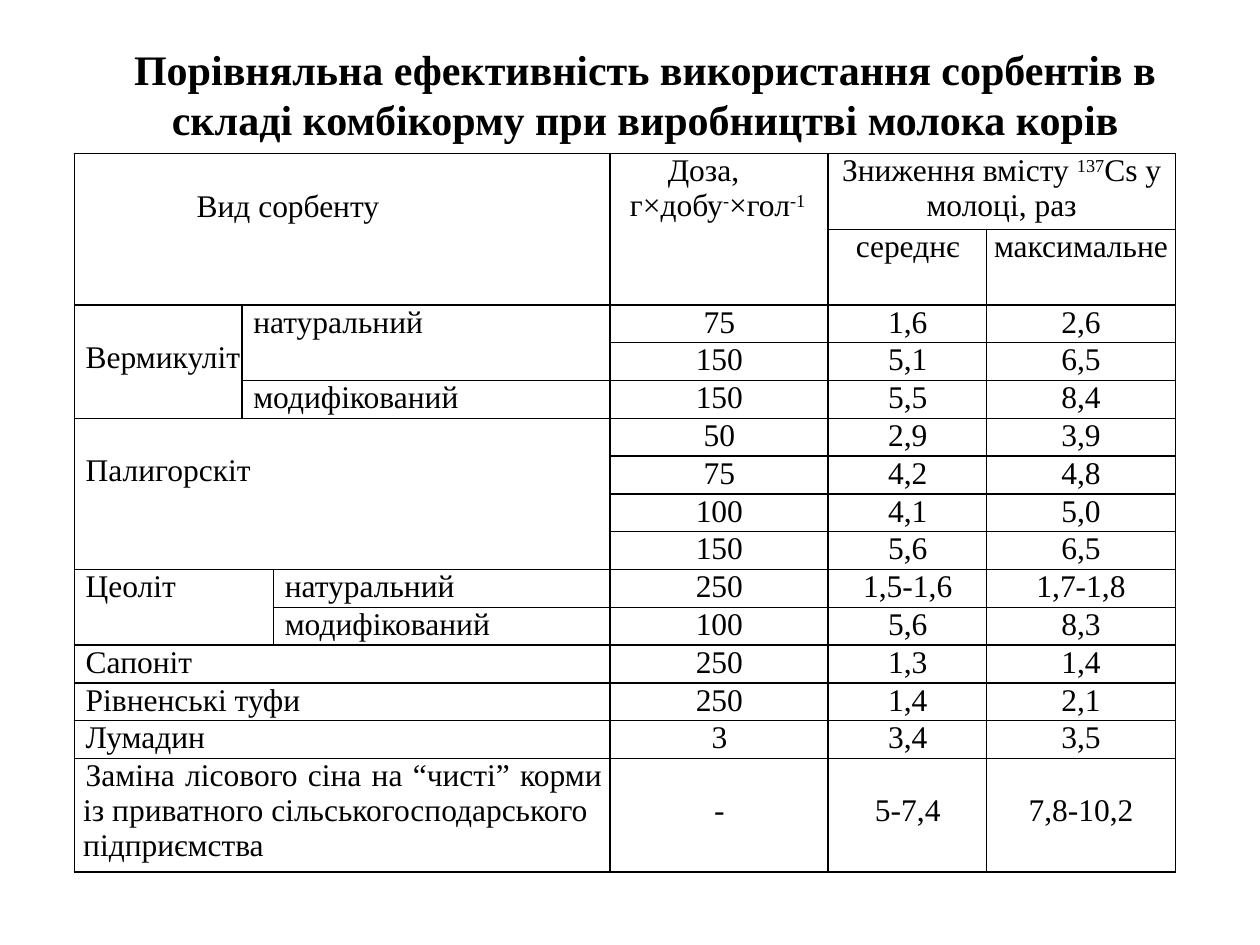
"""Build a slide with a table that compares sorbents in cow feed."""
from pptx import Presentation
from pptx.dml.color import RGBColor
from pptx.enum.text import MSO_ANCHOR, PP_ALIGN
from pptx.oxml import parse_xml
from pptx.oxml.ns import nsdecls
from pptx.util import Inches, Pt

BLACK = RGBColor(0, 0, 0)
WHITE = RGBColor(255, 255, 255)
FACE = "Times New Roman"
LEFT, MID, JUST = PP_ALIGN.LEFT, PP_ALIGN.CENTER, PP_ALIGN.JUSTIFY

TITLE = ("Порівняльна ефективність використання сорбентів в "
         "складі комбікорму при виробництві молока корів")
COLS = [1.33, 0.25, 2.67, 1.73, 1.26, 1.5]
ROWS = [0.6, 0.6] + [0.3] * 12 + [0.9]
LINE = 0.28

# row, column, rows, columns, text, align, margin, indent, top
HEADS = [
    (0, 0, 2, 3, "Вид сорбенту", LEFT, 0.97, 0, LINE),
    (0, 3, 2, 1, "Доза, г×добу|-|×гол|-1", LEFT, 0.16, 0.3, 0),
    (0, 4, 1, 2, "Зниження вмісту |137|Сs у\nмолоці, раз", MID, 0, 0, 0),
    (1, 4, 1, 1, "середнє", MID, 0.01, 0, 0),
    (1, 5, 1, 1, "максимальне", MID, 0, 0, 0),
]
NAMES = [
    (2, 0, 3, 1, "Вермикуліт", LEFT, 0.09, 0, LINE),
    (2, 1, 2, 2, "натуральний", LEFT, 0.09, 0, 0),
    (4, 1, 1, 2, "модифікований", LEFT, 0.09, 0, 0),
    (5, 0, 4, 3, "Палигорскіт", LEFT, 0.09, 0, LINE),
    (9, 0, 2, 2, "Цеоліт", LEFT, 0.09, 0, 0),
    (9, 2, 1, 1, "натуральний", LEFT, 0.09, 0, 0),
    (10, 2, 1, 1, "модифікований", LEFT, 0.09, 0, 0),
    (11, 0, 1, 3, "Сапоніт", LEFT, 0.09, 0, 0),
    (12, 0, 1, 3, "Рівненські туфи", LEFT, 0.09, 0, 0),
    (13, 0, 1, 3, "Лумадин", LEFT, 0.09, 0, 0),
    (14, 0, 1, 3, "Заміна лісового сіна на “чисті” корми із приватного "
     "сільськогосподарського\nпідприємства", JUST, 0.07, 0.02, 0),
]
DATA = [
    ("75", "1,6", "2,6"),
    ("150", "5,1", "6,5"),
    ("150", "5,5", "8,4"),
    ("50", "2,9", "3,9"),
    ("75", "4,2", "4,8"),
    ("100", "4,1", "5,0"),
    ("150", "5,6", "6,5"),
    ("250", "1,5-1,6", "1,7-1,8"),
    ("100", "5,6", "8,3"),
    ("250", "1,3", "1,4"),
    ("250", "1,4", "2,1"),
    ("3", "3,4", "3,5"),
    ("-", "5-7,4", "7,8-10,2"),
]


def style(para, size, align, bold=False):
    para.alignment = align
    font = para.font
    font.name, font.size, font.bold = FACE, Pt(size), bold
    font.color.rgb = BLACK


def border(cell):
    props = cell._tc.get_or_add_tcPr()
    for spot, side in enumerate(("lnL", "lnR", "lnT", "lnB")):
        props.insert(spot, parse_xml(
            f'<a:{side} {nsdecls("a")} w="12700"><a:solidFill>'
            f'<a:srgbClr val="{BLACK}"/></a:solidFill></a:{side}>'))


def write(grid, row, col, high, wide, text, align, margin, indent, top):
    cell = grid.cell(row, col)
    if high * wide > 1:
        cell.merge(grid.cell(row + high - 1, col + wide - 1))
    cell.margin_top = Inches(top)
    if align == JUST:
        cell.margin_right = Inches(0.06)
    frame = cell.text_frame
    for num, line in enumerate(text.split("\n")):
        para = frame.add_paragraph() if num else frame.paragraphs[0]
        style(para, 18, align)
        props = para._p.get_or_add_pPr()
        props.set("marL", str(Inches(margin)))
        props.set("indent", str(0 if num else Inches(indent)))
        for part, words in enumerate(line.split("|")):
            run = para.add_run()
            run.text = words
            if part % 2:
                run.font._element.set("baseline", "30000")


def main():
    deck = Presentation()
    deck.slide_width, deck.slide_height = Inches(10), Inches(7.5)
    slide = deck.slides.add_slide(deck.slide_layouts[5])

    title = slide.shapes.title
    title.left, title.top = Inches(0.75), Inches(0.29)
    title.width, title.height = Inches(8.74), Inches(0.91)
    frame = title.text_frame
    frame.text = TITLE
    frame.word_wrap = True
    frame.vertical_anchor = MSO_ANCHOR.MIDDLE
    style(frame.paragraphs[0], 24, MID, True)

    grid = slide.shapes.add_table(
        len(ROWS), len(COLS), Inches(0.59), Inches(1.22),
        Inches(sum(COLS)), Inches(sum(ROWS))).table
    grid.first_row = grid.horz_banding = False
    for col, width in zip(grid.columns, COLS):
        col.width = Inches(width)
    for row, height in zip(grid.rows, ROWS):
        row.height = Inches(height)
    for cell in grid.iter_cells():
        cell.margin_left = cell.margin_right = 0
        cell.margin_top = cell.margin_bottom = 0
        cell.fill.solid()
        cell.fill.fore_color.rgb = WHITE
        border(cell)
        style(cell.text_frame.paragraphs[0], 18, LEFT)

    last = len(ROWS) - 1
    for item in HEADS + NAMES:
        write(grid, *item)
    for row, values in enumerate(DATA, 2):
        for col, value in enumerate(values, 3):
            margin = 0 if col == 5 else 0.01
            top = LINE if row == last else 0
            write(grid, row, col, 1, 1, value, MID, margin, 0, top)
    deck.save("out.pptx")


if __name__ == "__main__":
    main()
